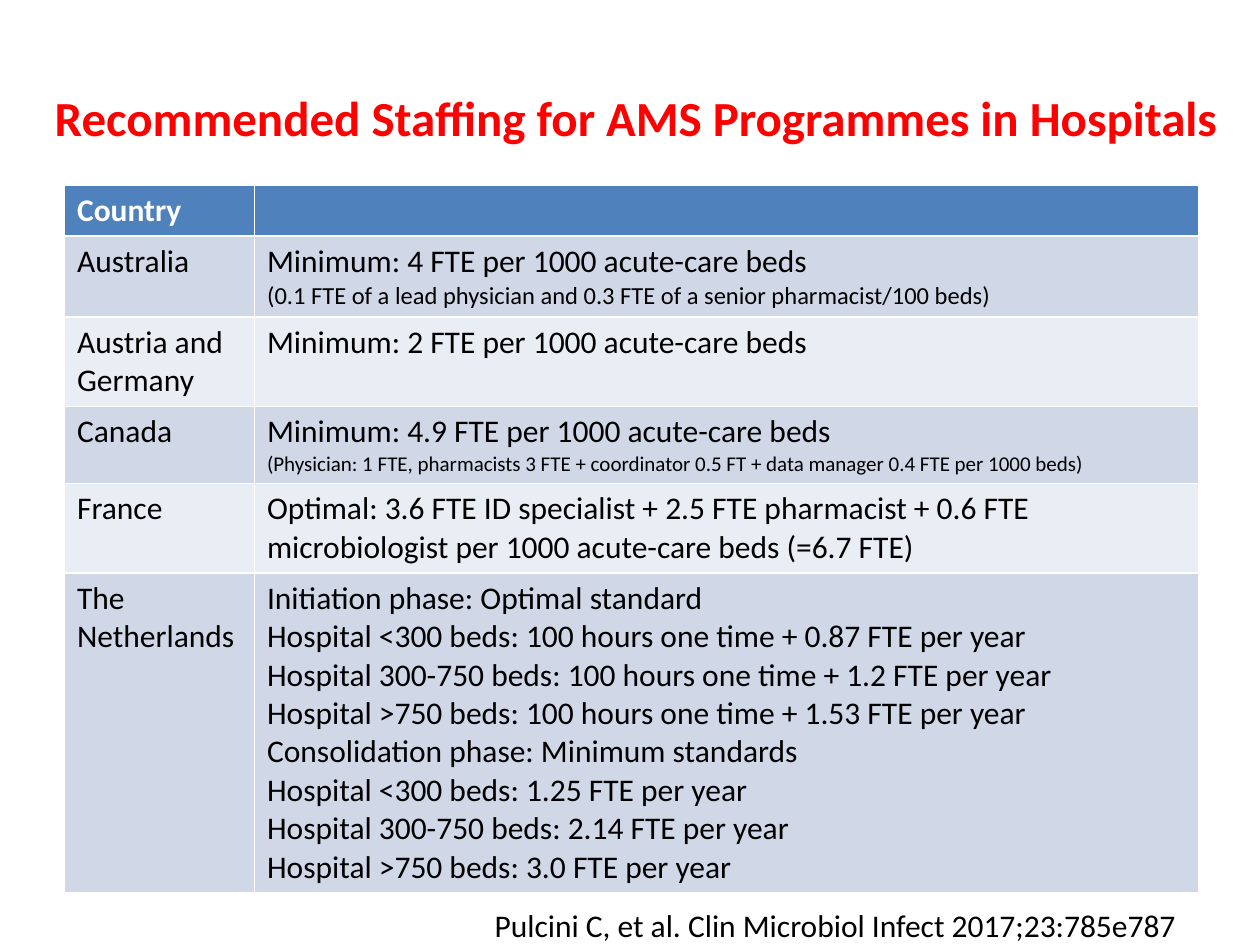
from pptx import Presentation
from pptx.dml.color import RGBColor
from pptx.enum import text
from pptx.util import Cm, Pt

RED = RGBColor(0xFF, 0x00, 0x00)
BLACK = RGBColor(0x00, 0x00, 0x00)
WHITE = RGBColor(0xFF, 0xFF, 0xFF)
HEADER_BLUE = RGBColor(0x4F, 0x81, 0xBD)
BANDS = [RGBColor(0xD0, 0xD8, 0xE8), RGBColor(0xE9, 0xED, 0xF4)]

TITLE_FONT = {"name": "Calibri", "size": Pt(28), "bold": True}
HEADER_FONT = {"name": "Calibri", "size": Pt(18), "bold": True}
BODY_FONT = {"name": "Calibri", "size": Pt(18), "bold": False}

COLUMN_WIDTHS = [Cm(3.83), Cm(19.03)]
ROW_HEIGHT = Cm(1.03)

# Each line of a cell is a text and its size in points
STAFFING = [
    ("Australia", [
        ("Minimum: 4 FTE per 1000 acute-care beds", 18),
        ("(0.1 FTE of a lead physician and 0.3 FTE of a senior pharmacist/100 beds)", 14)]),
    ("Austria and Germany", [("Minimum: 2 FTE per 1000 acute-care beds", 18)]),
    ("Canada", [
        ("Minimum: 4.9 FTE per 1000 acute-care beds", 18),
        ("(Physician: 1 FTE, pharmacists 3 FTE + coordinator 0.5 FT + "
         "data manager 0.4 FTE per 1000 beds)", 12)]),
    ("France", [
        ("Optimal: 3.6 FTE ID specialist + 2.5 FTE pharmacist + 0.6 FTE "
         "microbiologist per 1000 acute-care beds (=6.7 FTE)", 18)]),
    ("The Netherlands", [
        ("Initiation phase: Optimal standard", 18),
        ("Hospital <300 beds: 100 hours one time + 0.87 FTE per year", 18),
        ("Hospital 300-750 beds: 100 hours one time + 1.2 FTE per year", 18),
        ("Hospital >750 beds: 100 hours one time + 1.53 FTE per year", 18),
        ("Consolidation phase: Minimum standards", 18),
        ("Hospital <300 beds: 1.25 FTE per year", 18),
        ("Hospital 300-750 beds: 2.14 FTE per year", 18),
        ("Hospital >750 beds: 3.0 FTE per year", 18)]),
]


def set_attributes(target, values):
    for name, value in values.items():
        setattr(target, name, value)


def write_paragraph(paragraph, words, font, color, alignment=None):
    run = paragraph.add_run()
    run.text = words
    set_attributes(run.font, font)
    run.font.color.rgb = color
    paragraph.alignment = alignment


def fill_cell(cell, lines, font, color, background):
    cell.fill.solid()
    cell.fill.fore_color.rgb = background
    frame = cell.text_frame
    for index, (words, size) in enumerate(lines):
        paragraph = frame.add_paragraph() if index else frame.paragraphs[0]
        write_paragraph(paragraph, words, {**font, "size": Pt(size)}, color)


def add_title(slide, words):
    title = slide.shapes.title
    set_attributes(title, {"left": Cm(0.71), "top": Cm(0.76),
                           "width": Cm(24.21), "height": Cm(3.18)})
    title.text_frame.vertical_anchor = text.MSO_ANCHOR.MIDDLE
    write_paragraph(title.text_frame.paragraphs[0], words, TITLE_FONT, RED,
                    text.PP_ALIGN.CENTER)


def add_staffing_table(slide):
    row_count = len(STAFFING) + 1
    table = slide.shapes.add_table(
        row_count, len(COLUMN_WIDTHS), Cm(1.3), Cm(3.73),
        sum(COLUMN_WIDTHS), ROW_HEIGHT * row_count).table
    for column, width in zip(table.columns, COLUMN_WIDTHS):
        column.width = width

    # Header row
    for column, lines in enumerate([[("Country", 18)], []]):
        fill_cell(table.cell(0, column), lines, HEADER_FONT, WHITE, HEADER_BLUE)

    # Country rows in alternating bands; they grow with their text
    for row, (country, lines) in enumerate(STAFFING, start=1):
        background = BANDS[(row - 1) % 2]
        for column, content in enumerate([[(country, 18)], lines]):
            fill_cell(table.cell(row, column), content, BODY_FONT, BLACK, background)


def add_citation(slide, words):
    box = slide.shapes.add_textbox(Cm(8.51), Cm(18.14), Cm(15.6), Cm(1.02))
    set_attributes(box.text_frame, {"word_wrap": True,
                                    "auto_size": text.MSO_AUTO_SIZE.SHAPE_TO_FIT_TEXT})
    write_paragraph(box.text_frame.paragraphs[0], words, BODY_FONT, BLACK,
                    text.PP_ALIGN.RIGHT)


def main():
    presentation = Presentation()
    set_attributes(presentation, {"slide_width": Cm(25.4), "slide_height": Cm(19.05)})
    slide = presentation.slides.add_slide(presentation.slide_layouts.get_by_name("Title Only"))
    add_title(slide, "Recommended Staffing for AMS Programmes in Hospitals")
    add_staffing_table(slide)
    add_citation(slide, "Pulcini C, et al. Clin Microbiol Infect 2017;23:785e787 ")
    presentation.save("out.pptx")


if __name__ == "__main__":
    main()
